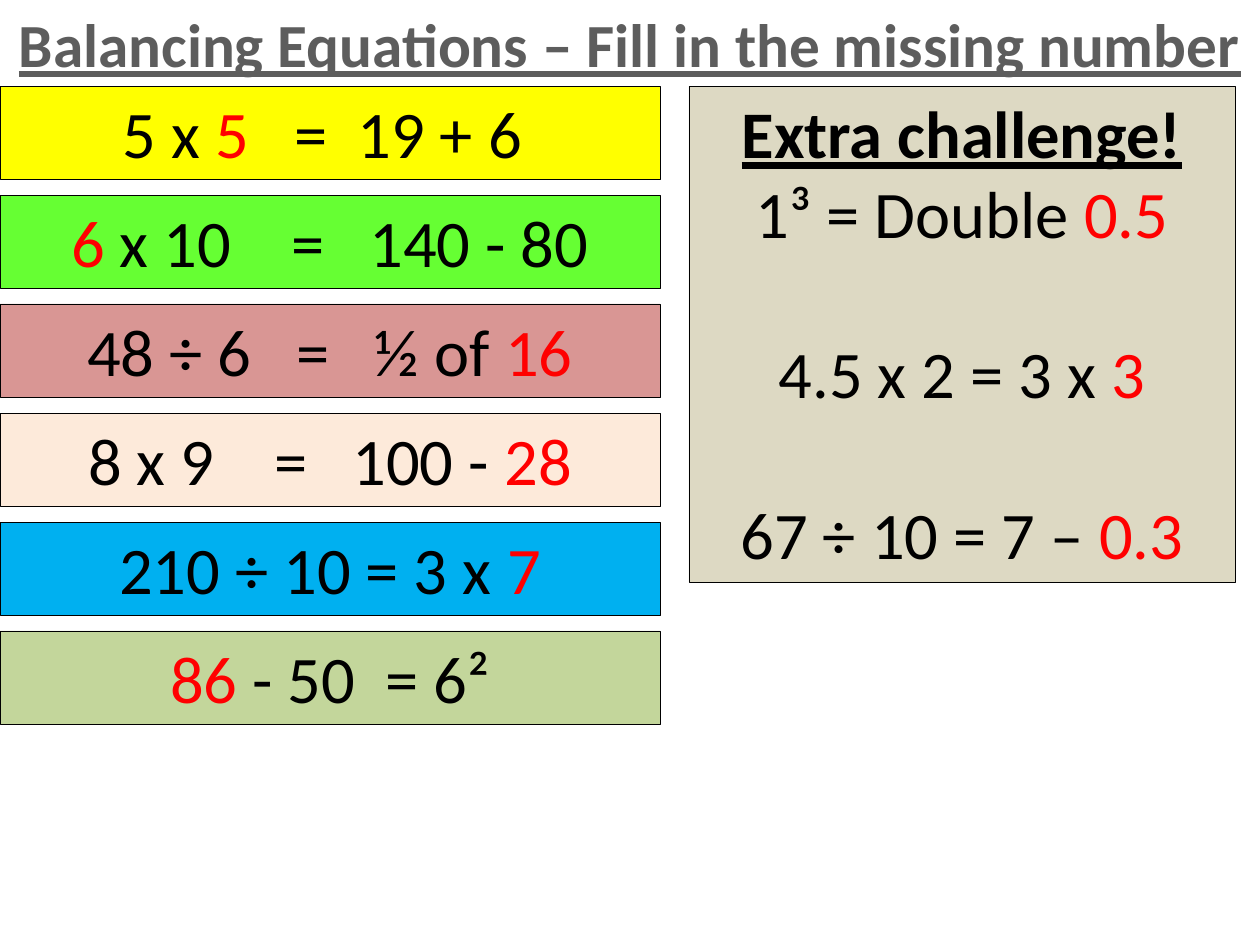
from pptx import Presentation
from pptx import util as u
from pptx.dml.color import RGBColor
from pptx.enum import shapes, text

PX = 914400 / 126  # EMU in one pixel
FONT = "Calibri"
BLACK, RED, GREY = "000000", "FF0000", "5D5D5D"
TEXT_SIZE, TITLE_SIZE = 38, 35
TOP, ROW_HEIGHT, ROW_PITCH, ROW_WIDTH = 86, 93, 109, 660

# Answers stand between bars and are shown in red
EQUATIONS = [
    ("FFFF00", "5 x |5|   =  19 + 6 "),
    ("66FF33", "|6| x 10    =   140 - 80"),
    ("D99694", "48 ÷ 6   =   ½ of |16|"),
    ("FDEADA", "8 x 9    =   100 - |28|"),
    ("00B0F0", "210 ÷ 10 = 3 x |7|"),
    ("C3D69B", "|86| - 50  = 6²"),
]
CHALLENGES = ["1³ = Double |0.5|", "4.5 x 2 = 3 x |3|", " 67 ÷ 10 = 7 – |0.3 |"]


def px(length):
    return u.Emu(round(length * PX))


def colour(value):
    return RGBColor.from_string(value)


def place(shape, left, top, width, height):
    shape.left, shape.top = px(left), px(top)
    shape.width, shape.height = px(width), px(height)


def set_frame(frame):
    frame.word_wrap = True
    frame.auto_size = text.MSO_AUTO_SIZE.NONE
    frame.vertical_anchor = text.MSO_ANCHOR.TOP


def add_span(para, words, shade, size=TEXT_SIZE, heading=False):
    span = para.add_run()
    span.text = words
    font = span.font
    font.name, font.size = FONT, u.Pt(size)
    font.bold = font.underline = heading
    font.color.rgb = colour(shade)


def add_equation(para, equation):
    para.alignment = text.PP_ALIGN.CENTER
    for index, words in enumerate(equation.split("|")):
        if words:
            add_span(para, words, RED if index % 2 else BLACK)


def add_title(page, words):
    title = page.shapes.title
    place(title, 0, 0, 1260, 87)
    set_frame(title.text_frame)
    para = title.text_frame.paragraphs[0]
    para.alignment = text.PP_ALIGN.CENTER
    add_span(para, words, GREY, TITLE_SIZE, heading=True)


def add_box(page, left, top, width, height, fill):
    box = page.shapes.add_shape(
        shapes.MSO_SHAPE.RECTANGLE, px(left), px(top), px(width), px(height))
    box.shadow.inherit = False
    box.fill.solid()
    box.fill.fore_color.rgb = colour(fill)
    box.line.color.rgb = colour(BLACK)
    box.line.width = u.Pt(0.5)
    set_frame(box.text_frame)
    return box.text_frame


def add_challenge_panel(page):
    frame = add_box(page, 689, TOP, 546, 496, "DDD9C3")
    heading = frame.paragraphs[0]
    heading.alignment = text.PP_ALIGN.CENTER
    add_span(heading, "Extra challenge!", BLACK, heading=True)
    for index, equation in enumerate(CHALLENGES):
        para = frame.add_paragraph()
        if index:
            para.space_before = u.Pt(46)  # one line left for working
        add_equation(para, equation)


def main():
    deck = Presentation()
    deck.slide_width, deck.slide_height = u.Inches(10), u.Inches(7.5)
    page = deck.slides.add_slide(deck.slide_layouts[5])
    add_title(page, "Balancing Equations – Fill in the missing number")

    # Column of equations
    for row, (fill, equation) in enumerate(EQUATIONS):
        frame = add_box(page, 0, TOP + row * ROW_PITCH, ROW_WIDTH, ROW_HEIGHT, fill)
        add_equation(frame.paragraphs[0], equation)

    add_challenge_panel(page)
    deck.save("out.pptx")


if __name__ == "__main__":
    main()
